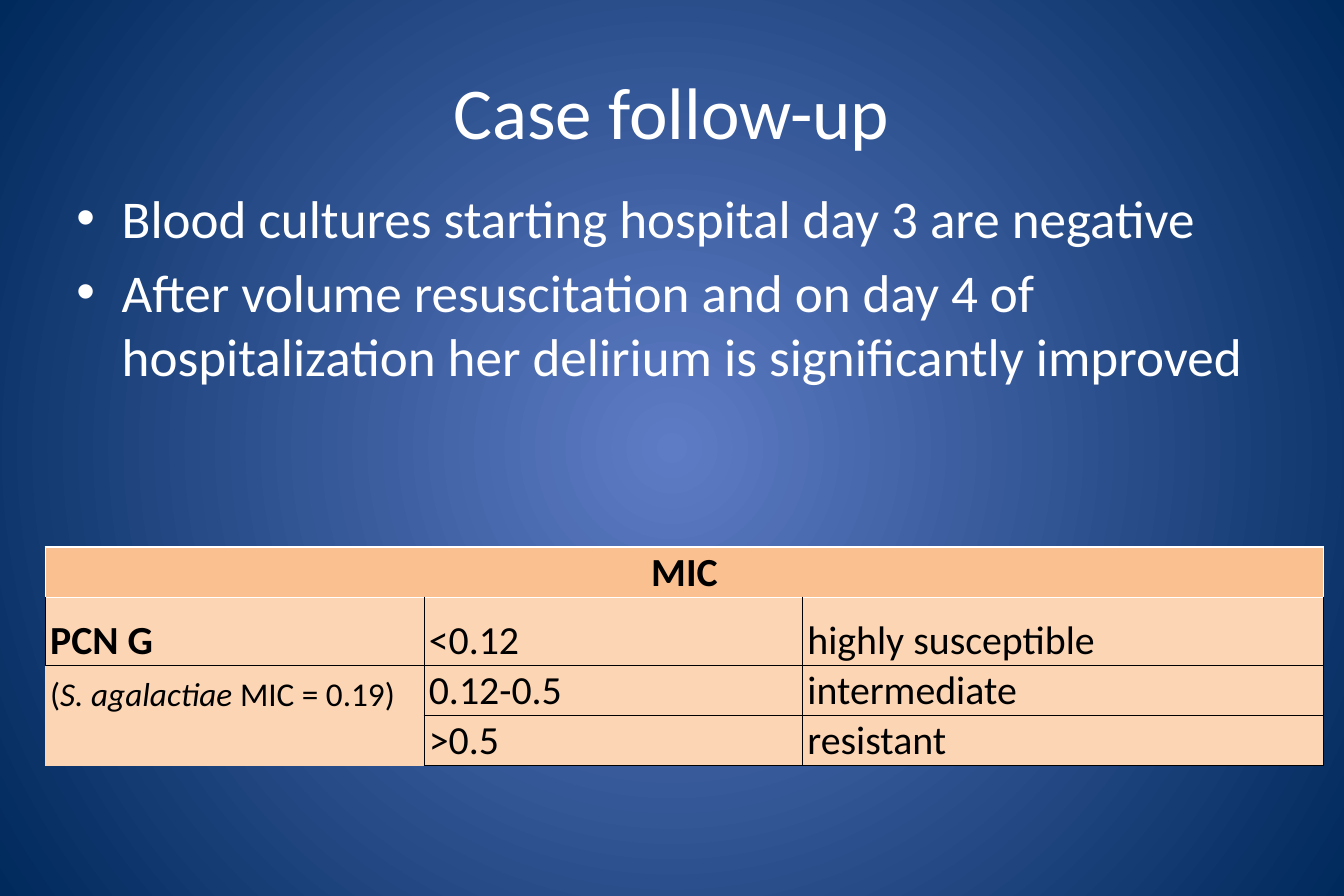
from dataclasses import dataclass

from lxml.etree import SubElement
from pptx import Presentation
from pptx.dml.color import RGBColor
from pptx.enum.text import MSO_ANCHOR, PP_ALIGN
from pptx.oxml import parse_xml
from pptx.oxml.ns import nsdecls, qn
from pptx.util import Inches, Pt

WHITE, BLACK = "FFFFFF", "000000"
HEADER_FILL, BODY_FILL = "FAC090", "FCD5B5"
COLUMN_WIDTHS = (3.17, 3.17, 4.36)
ROW_HEIGHTS = (0.42, 0.57, 0.42, 0.42)
THIN, HEADER_LINE = (BLACK, 0.5), (WHITE, 1)


@dataclass
class Run:
    text: str
    size: float = 24
    bold: bool = False
    italic: bool = False


@dataclass
class CellEntry:
    row: int
    column: int
    runs: tuple[Run, ...] = ()
    sides: str = "LRTB"


def rgb(color: str) -> RGBColor:
    return RGBColor.from_string(color)


def add_text(paragraph, text: str, *, size: float, color: str = WHITE,
             bold: bool = False, italic: bool = False) -> None:
    run = paragraph.add_run()
    run.text = text
    font = run.font
    font.name, font.size, font.bold, font.italic = "Calibri", Pt(size), bold, italic
    font.color.rgb = rgb(color)


def add_text_frame(slide, left: float, top: float, width: float, height: float, anchor):
    shape = slide.shapes.add_textbox(Inches(left), Inches(top), Inches(width), Inches(height))
    shape.text_frame.word_wrap = True
    shape.text_frame.vertical_anchor = anchor
    return shape.text_frame


def set_bullet(paragraph) -> None:
    properties = paragraph._p.get_or_add_pPr()
    properties.set("marL", str(Inches(0.38)))
    properties.set("indent", str(Inches(-0.38)))
    SubElement(properties, qn("a:buFont")).set("typeface", "Arial")
    SubElement(properties, qn("a:buChar")).set("char", "•")


def set_borders(cell, borders: dict[str, tuple[str, float]]) -> None:
    properties = cell._tc.get_or_add_tcPr()
    for index, side in enumerate("LRTB"):
        color, width = borders.get(side, (None, 0))
        paint = (f'<a:solidFill><a:srgbClr val="{color}"/></a:solidFill>'
                 if color else "<a:noFill/>")
        properties.insert(index, parse_xml(
            f'<a:ln{side} {nsdecls("a")} w="{Pt(width)}">{paint}</a:ln{side}>'))


def set_radial_background(slide, center: str, edge: str) -> None:
    slide.background.fill.solid()
    background = slide.element.find(".//" + qn("p:bgPr"))
    background.replace(background[0], parse_xml(
        f'<a:gradFill {nsdecls("a")} rotWithShape="1"><a:gsLst>'
        f'<a:gs pos="0"><a:srgbClr val="{center}"/></a:gs>'
        f'<a:gs pos="100000"><a:srgbClr val="{edge}"/></a:gs></a:gsLst>'
        '<a:path path="circle"><a:fillToRect l="50000" t="50000" r="50000" b="50000"/>'
        '</a:path></a:gradFill>'))


def fill_cell(table, entry: CellEntry) -> None:
    cell = table.cell(entry.row, entry.column)
    is_header = entry.row == 0
    cell.fill.solid()
    cell.fill.fore_color.rgb = rgb(HEADER_FILL if is_header else BODY_FILL)
    cell.margin_left = cell.margin_right = Inches(0.04)
    cell.margin_top, cell.margin_bottom = Inches(0.01), 0
    cell.vertical_anchor = MSO_ANCHOR.TOP if is_header else MSO_ANCHOR.BOTTOM
    borders = {side: HEADER_LINE if is_header else THIN for side in entry.sides}
    if entry.row == 1:
        borders["T"] = HEADER_LINE
    set_borders(cell, borders)
    paragraph = cell.text_frame.paragraphs[0]
    paragraph.alignment = PP_ALIGN.CENTER if is_header else PP_ALIGN.LEFT
    for run in entry.runs:
        add_text(paragraph, run.text, size=run.size, color=BLACK,
                 bold=run.bold, italic=run.italic)


def add_mic_table(slide) -> None:
    table = slide.shapes.add_table(
        len(ROW_HEIGHTS), len(COLUMN_WIDTHS), Inches(0.38), Inches(4.58),
        Inches(sum(COLUMN_WIDTHS)), Inches(sum(ROW_HEIGHTS))).table
    for column, width in zip(table.columns, COLUMN_WIDTHS):
        column.width = Inches(width)
    for row, height in zip(table.rows, ROW_HEIGHTS):
        row.height = Inches(height)
    table.cell(0, 0).merge(table.cell(0, 2))

    strain = (Run("(", 20), Run("S. agalactiae ", 20, italic=True), Run("MIC = 0.19)", 20))
    entries = [
        CellEntry(0, 0, (Run("MIC", bold=True),)),
        CellEntry(0, 1),
        CellEntry(0, 2),
        CellEntry(1, 0, (Run("PCN G", bold=True),)),
        CellEntry(2, 0, strain, sides="TR"),
        CellEntry(3, 0, sides="R"),
    ]
    levels = (("<0.12", "highly susceptible"), ("0.12-0.5", "intermediate"),
              (">0.5", "resistant"))
    entries += [CellEntry(row, column, (Run(text),))
                for row, level in enumerate(levels, start=1)
                for column, text in enumerate(level, start=1)]
    for entry in entries:
        fill_cell(table, entry)


def main() -> None:
    presentation = Presentation()
    presentation.slide_width, presentation.slide_height = Inches(11.25), Inches(7.5)
    slide = presentation.slides.add_slide(presentation.slide_layouts[6])
    set_radial_background(slide, "5E7CC5", "00295C")

    # Title
    title = add_text_frame(slide, 0.56, 0.3, 10.12, 1.25, MSO_ANCHOR.MIDDLE).paragraphs[0]
    title.alignment = PP_ALIGN.CENTER
    add_text(title, "Case follow-up", size=44)

    # Follow-up points
    points = (
        "Blood cultures starting hospital day 3 are negative",
        "After volume resuscitation and on day 4 of hospitalization "
        "her delirium is significantly improved",
    )
    body = add_text_frame(slide, 0.54, 1.5, 10.12, 4.95, MSO_ANCHOR.TOP)
    for index, point in enumerate(points):
        paragraph = body.add_paragraph() if index else body.paragraphs[0]
        paragraph.space_before = Pt(6.4)
        set_bullet(paragraph)
        add_text(paragraph, point, size=32)

    # Susceptibility table
    add_mic_table(slide)
    presentation.save("out.pptx")


if __name__ == "__main__":
    main()
